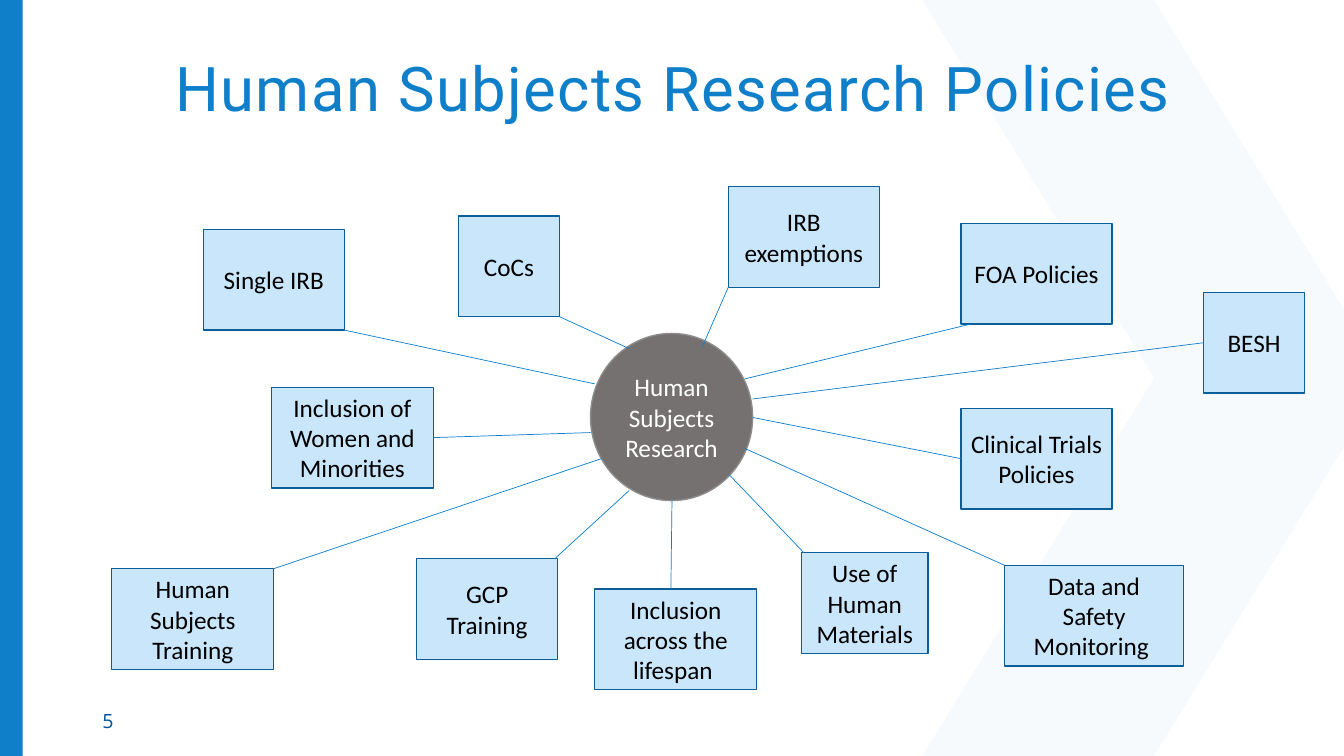
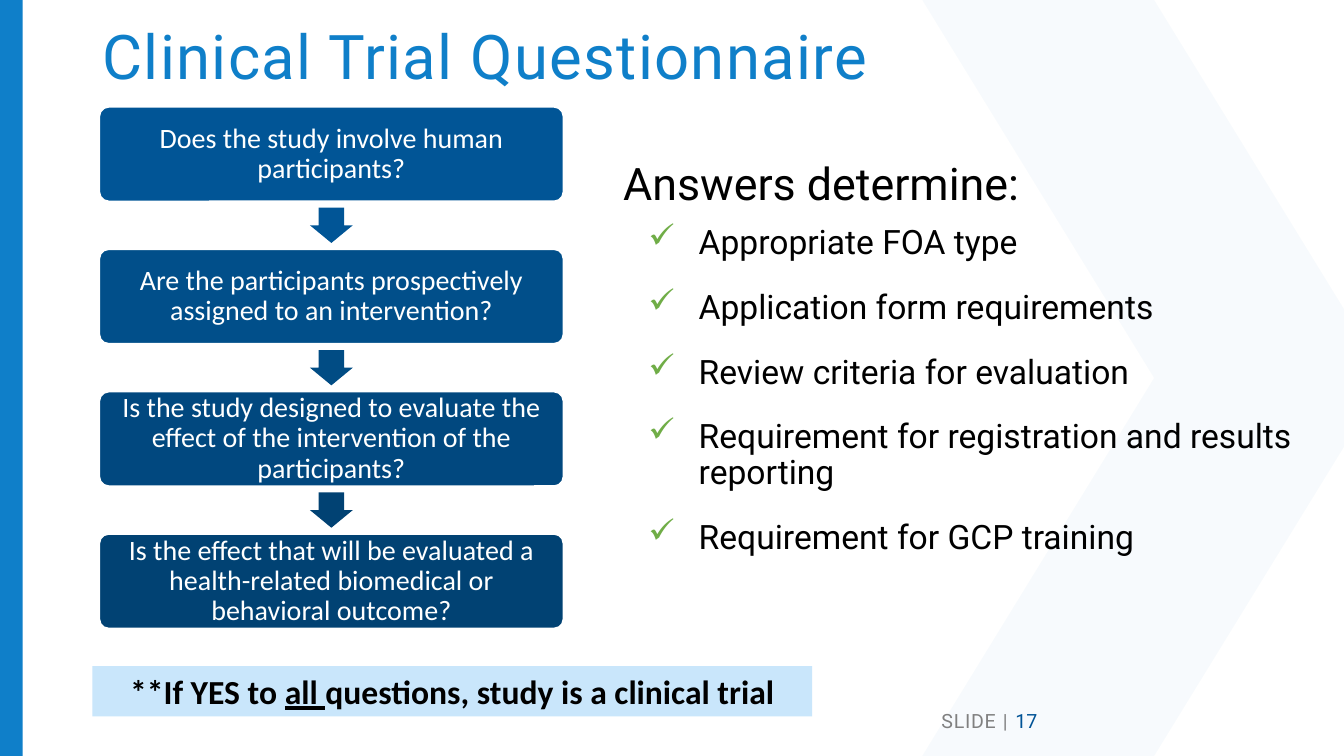
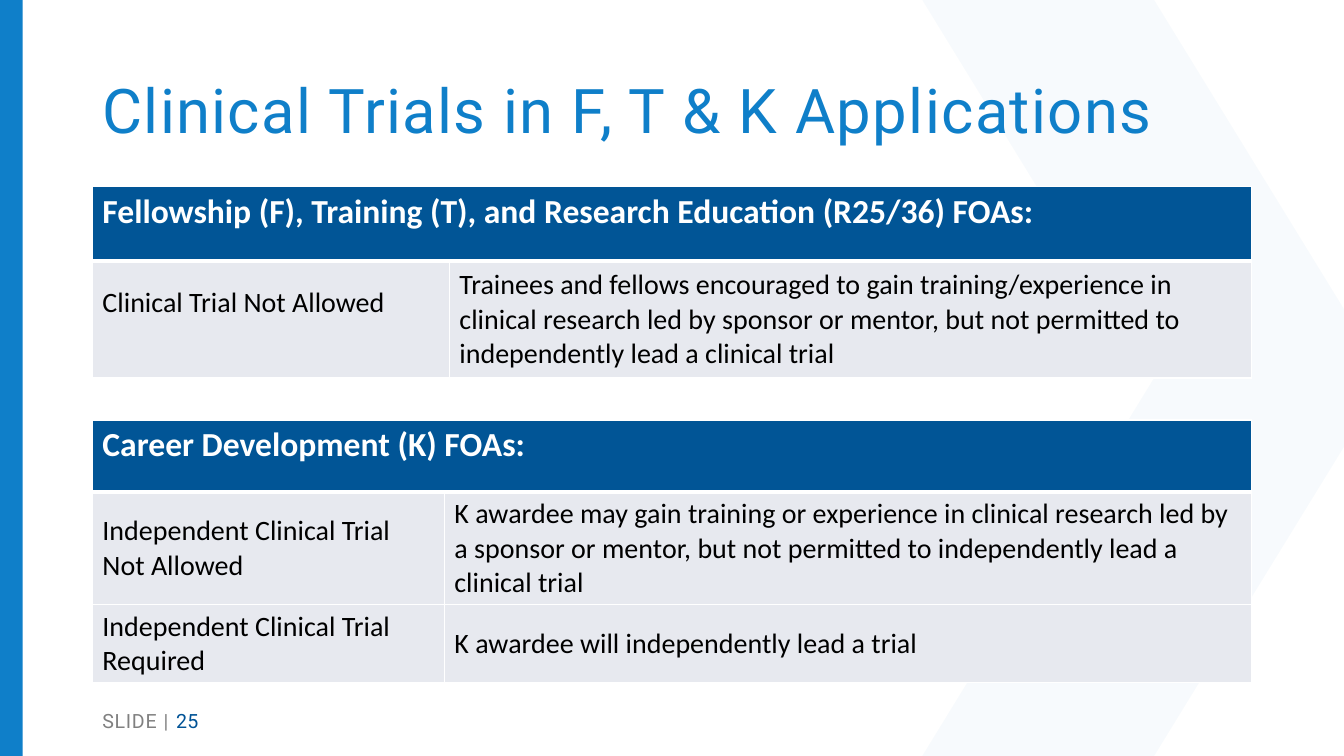
"""Three slides on human subjects research policies and clinical trials."""
from dataclasses import dataclass, replace
from typing import NamedTuple, Optional

from lxml import etree
from pptx import Presentation
from pptx import util as u
from pptx.dml.color import RGBColor
from pptx.enum import shapes, text
from pptx.oxml import ns

COLUMNS, ROWS = 160, 90
CELL = u.Pt(6)
MARGIN = 11
BODY_WIDTH = COLUMNS - 2 * MARGIN

BLUE, NAVY, DEEP_BLUE, PALE_BLUE = "0F7FC9", "015596", "015396", "C9E6FB"
EDGE_BLUE, LINK_BLUE = "0B5E98", "0F7FCD"
GREY, EDGE_GREY, LABEL_GREY, PALE_GREY = "767171", "8D8D8D", "808080", "E7E9EF"
GREEN, WHITE, BLACK = "70AD47", "FFFFFF", "000000"

MIDDLE, TOP = text.MSO_ANCHOR.MIDDLE, text.MSO_ANCHOR.TOP
LEFT, CENTER = text.PP_ALIGN.LEFT, text.PP_ALIGN.CENTER
PRESET = shapes.MSO_SHAPE


@dataclass(frozen=True)
class Style:
    size: float
    colour: str
    font: str = "Calibri"
    bold: bool = False
    underline: bool = False
    tracking: float = 0


class Area(NamedTuple):
    left: float
    top: float
    width: float
    height: float


class Outline(NamedTuple):
    colour: str
    width: float


class Policy(NamedTuple):
    name: str
    left: float
    top: float
    width: float
    anchor: tuple[float, float]
    hub_point: tuple[float, float]


class Step(NamedTuple):
    question: str
    fill: str
    arrow: Optional[str]


class Grid(NamedTuple):
    top: float
    columns: list[float]
    rows: list[float]
    heading: str
    body: list[list[str]]


TITLE = Style(44, BLUE, "Roboto", tracking=1)
POLICY = Style(18, BLACK)
HUB = Style(18, WHITE)
QUESTION = Style(20, WHITE)
NOTE = Style(24, BLACK, bold=True)
LEAD = Style(32, BLACK, "Roboto")
ANSWER = Style(24, BLACK, "Roboto")
HEADING = Style(24, WHITE, bold=True)
ENTRY = Style(20, BLACK)
LABEL = Style(14, LABEL_GREY, "Roboto", tracking=0.5)
NUMBER = Style(14, DEEP_BLUE, "Roboto")

HUB_AREA = Area(70.3, 39.7, 19.3, 19.9)
POLICY_HEIGHT = 12
SIDES = {(0.5, 0): 0, (0, 0.5): 1, (0.5, 1): 2, (1, 0.5): 3}
POLICIES = [
    Policy("Single IRB", 24.2, 27.3, 16.8, (1, 1), (70.8, 45.7)),
    Policy("CoCs", 54.6, 25.7, 12, (1, 1), (74.9, 41.5)),
    Policy("IRB exemptions", 86.7, 22.2, 18, (0, 1), (83.6, 41.3)),
    Policy("FOA Policies", 114.4, 26.6, 18, (0.06, 1), (88.7, 45.1)),
    Policy("BESH", 143.3, 34.8, 12, (0, 0.5), (89.6, 47.5)),
    Policy("Clinical Trials Policies", 114.4, 48.6, 18, (0, 0.5), (89.6, 49.7)),
    Policy("Data and Safety Monitoring ", 119.6, 67.3, 21.3, (0, 0), (88.7, 53.4)),
    Policy("Use of Human Materials", 95.4, 65.8, 15.1, (0.02, 0), (86.8, 56.5)),
    Policy("Inclusion across the lifespan ", 70.8, 70.1, 19.3, (0.47, 0), (80, 59.6)),
    Policy("GCP Training", 49.6, 66.5, 16.8, (0.98, 0), (74.9, 58.4)),
    Policy("Human Subjects Training", 13.3, 67.7, 19.3, (1, 0), (71.6, 54.6)),
    Policy("Inclusion of Women and Minorities", 32.3, 46.1, 19.3, (1, 0.5), (70.3, 51.5)),
]

FIRST_STEP = Area(11.8, 12.7, 55.3, 11.3)
STEP_PITCH = 16.95
ARROW_WIDTH, ARROW_HEIGHT = 5.1, 4.2
STEPS = [
    Step("Does the study involve human participants?", NAVY, NAVY),
    Step("Are the participants prospectively assigned to an intervention?", "014F8A", "014C84"),
    Step("Is the study designed to evaluate the effect of the intervention of the participants?",
         "01487F", "014273"),
    Step("Is the effect that will be evaluated a health-related biomedical or behavioral outcome?",
         "014273", None),
]
ANSWERS = [
    "Appropriate FOA type",
    "Application form requirements",
    "Review criteria for evaluation",
    "Requirement for registration and results reporting",
    "Requirement for GCP training",
]

FELLOWSHIP = Grid(
    22.2, [42.5, 95.5], [8.9, 13.9],
    "Fellowship (F), Training (T), and Research Education (R25/36) FOAs:",
    [["Clinical Trial Not Allowed",
      "Trainees and fellows encouraged to gain training/experience in clinical research led by "
      "sponsor or mentor, but not permitted to independently lead a clinical trial"]])
CAREER = Grid(
    50, [41.9, 96.1], [8.6, 13.4, 9.3],
    "Career Development (K) FOAs:",
    [["Independent Clinical Trial Not Allowed",
      "K awardee may gain training or experience in clinical research led by a sponsor or mentor, "
      "but not permitted to independently lead a clinical trial"],
     ["Independent Clinical Trial Required", "K awardee will independently lead a trial"]])


def cells(count: float) -> int:
    """Turn a number of grid cells into a length."""
    return u.Emu(round(count * CELL))


def place(area: Area) -> tuple:
    """Turn an area of the grid into left, top, width and height."""
    return tuple(cells(value) for value in area)


def rgb(value: str) -> RGBColor:
    """Turn a hex string into a colour."""
    return RGBColor.from_string(value)


def add_child(parent, tag: str, **attributes):
    """Append a DrawingML element to a parent element."""
    return etree.SubElement(parent, ns.qn(tag), attributes)


def format_run(span, style: Style) -> None:
    """Apply a text style to a run."""
    span.font.size = u.Pt(style.size)
    span.font.name = style.font
    span.font.bold = style.bold
    span.font.underline = style.underline
    span.font.color.rgb = rgb(style.colour)
    if style.tracking:
        span.font._element.set("spc", str(round(style.tracking * 100)))


def write(frame, spans: list[tuple[str, Style]], align=LEFT, anchor=MIDDLE, leading: float = 1.0) -> None:
    """Fill a text frame with one paragraph of styled spans."""
    frame.word_wrap = True
    frame.vertical_anchor = anchor
    para = frame.paragraphs[0]
    para.alignment = align
    para.line_spacing = leading
    for words, style in spans:
        span = para.add_run()
        span.text = words
        format_run(span, style)


def paint(shape, fill: str, outline: Optional[Outline] = None) -> None:
    """Give a shape a plain fill and an optional outline."""
    shape.shadow.inherit = False
    shape.fill.solid()
    shape.fill.fore_color.rgb = rgb(fill)
    if outline:
        shape.line.color.rgb = rgb(outline.colour)
        shape.line.width = u.Pt(outline.width)
    else:
        shape.line.fill.background()


def add_box(page, preset, area: Area, fill: str, outline: Optional[Outline] = None):
    """Add a painted preset shape."""
    box = page.shapes.add_shape(preset, *place(area))
    paint(box, fill, outline)
    return box


def add_text(page, area: Area, spans: list[tuple[str, Style]], leading: float = 1.0) -> None:
    """Add a text box with one paragraph."""
    write(page.shapes.add_textbox(*place(area)).text_frame, spans, leading=leading)


def add_page(deck, title: str, title_area: Area):
    """Add a blank page with the chevron, the side bar and a title."""
    page = deck.slides.add_slide(deck.slide_layouts[6])
    outer, inner, middle = 109.8, 137.4, ROWS / 2
    corners = [(inner, 0), (COLUMNS, 36.8), (COLUMNS, ROWS - 36.8), (inner, ROWS),
               (outer, ROWS), (inner, middle)]
    builder = page.shapes.build_freeform(cells(outer), 0)
    builder.add_line_segments([(cells(x), cells(y)) for x, y in corners], close=True)
    chevron = builder.convert_to_shape()
    paint(chevron, BLUE)
    add_child(chevron._element.spPr.find(".//" + ns.qn("a:srgbClr")), "a:alpha", val="3000")
    add_box(page, PRESET.RECTANGLE, Area(0, 0, 2.7, ROWS), BLUE)
    add_text(page, title_area, [(title, TITLE)], leading=0.9)
    return page


def add_footer(page, spans: list[tuple[str, Style]], left: float = MARGIN) -> None:
    """Add the page number line."""
    add_text(page, Area(left, 83.4, 36, 4.8), spans)


def numbered(number: str) -> list[tuple[str, Style]]:
    """Return the spans of a labelled page number."""
    return [("SLIDE", LABEL), (" | ", replace(LABEL, tracking=1)), (number, NUMBER)]


def add_policy(page, policy: Policy) -> None:
    """Add a policy box and its link to the hub."""
    area = Area(policy.left, policy.top, policy.width, POLICY_HEIGHT)
    box = add_box(page, PRESET.RECTANGLE, area, PALE_BLUE, Outline(EDGE_BLUE, 1))
    write(box.text_frame, [(policy.name, POLICY)], CENTER)
    start = (area.left + policy.anchor[0] * area.width, area.top + policy.anchor[1] * area.height)
    link = page.shapes.add_connector(
        shapes.MSO_CONNECTOR.STRAIGHT, *(cells(value) for value in start + policy.hub_point))
    link.line.color.rgb = rgb(LINK_BLUE)
    link.line.width = u.Pt(0.5)
    add_child(link._element.spPr, "a:effectLst")
    if policy.anchor in SIDES:
        link.begin_connect(box, SIDES[policy.anchor])


def add_step(page, index: int, step: Step) -> None:
    """Add a question and the arrow below it."""
    area = FIRST_STEP._replace(top=FIRST_STEP.top + index * STEP_PITCH)
    box = add_box(page, PRESET.ROUNDED_RECTANGLE, area, step.fill, Outline(WHITE, 1.5))
    box.adjustments[0] = 0.1
    frame = box.text_frame
    frame.margin_left = frame.margin_right = frame.margin_top = frame.margin_bottom = u.Inches(0.08)
    write(frame, [(step.question, QUESTION)], CENTER, leading=0.9)
    if step.arrow:
        gap = STEP_PITCH - area.height
        arrow = add_box(page, PRESET.DOWN_ARROW, Area(
            area.left + (area.width - ARROW_WIDTH) / 2,
            area.top + area.height + (gap - ARROW_HEIGHT) / 2,
            ARROW_WIDTH, ARROW_HEIGHT), step.arrow)
        arrow.adjustments[0], arrow.adjustments[1] = 0.6, 0.5


def add_answers(page) -> None:
    """Add the lead line and the ticked list of answers."""
    frame = page.shapes.add_textbox(*place(Area(73, 17.4, 83.8, 57.2))).text_frame
    write(frame, [("Answers determine:", LEAD)], anchor=TOP, leading=1.08)
    for index, answer in enumerate(ANSWERS):
        para = frame.add_paragraph()
        para.text = answer
        para.level = 1
        properties = para._p.get_or_add_pPr()
        properties.set("marL", str(u.Inches(0.75)))
        properties.set("indent", str(u.Inches(-0.5)))
        add_child(add_child(properties, "a:buClr"), "a:srgbClr", val=GREEN)
        add_child(properties, "a:buChar", char="✓")
        para.line_spacing = 0.88
        para.space_before = u.Pt(9 if index else 12)
        para.space_after = u.Pt(12)
        format_run(para.runs[0], ANSWER)


def format_cell(cell, row: int) -> None:
    """Give a table cell white borders and its row's fill."""
    properties = cell._tc.get_or_add_tcPr()
    widths = {"a:lnL": 1, "a:lnR": 1, "a:lnT": 3 if row == 1 else 1, "a:lnB": 3 if row == 0 else 1}
    for tag, width in widths.items():
        border = add_child(properties, tag, w=str(u.Pt(width)))
        add_child(add_child(border, "a:solidFill"), "a:srgbClr", val=WHITE)
    cell.fill.solid()
    cell.fill.fore_color.rgb = rgb(PALE_GREY if row else NAVY)


def add_grid(page, grid: Grid):
    """Add a table with a heading across both columns."""
    area = Area(MARGIN, grid.top, BODY_WIDTH, sum(grid.rows))
    table = page.shapes.add_table(len(grid.rows), len(grid.columns), *place(area)).table
    table.horz_banding = False
    for column, width in zip(table.columns, grid.columns):
        column.width = cells(width)
    for row, height in enumerate(grid.rows):
        table.rows[row].height = cells(height)
        for column in range(len(grid.columns)):
            cell = table.cell(row, column)
            format_cell(cell, row)
            if row:
                write(cell.text_frame, [(grid.body[row - 1][column], ENTRY)])
                cell.vertical_anchor = MIDDLE
    heading = table.cell(0, 0)
    heading.merge(table.cell(0, len(grid.columns) - 1))
    write(heading.text_frame, [(grid.heading, HEADING)], anchor=TOP)
    return table


def add_policies_page(deck) -> None:
    """Build the map of policies around human subjects research."""
    page = add_page(deck, "Human Subjects Research Policies", Area(19.7, 2.9, 127, 16.1))
    add_footer(page, [("5", replace(NUMBER, font="Open Sans"))])
    hub = add_box(page, PRESET.FLOWCHART_CONNECTOR, HUB_AREA, GREY, Outline(EDGE_GREY, 1))
    write(hub.text_frame, [("Human Subjects Research", HUB)], CENTER)
    for policy in POLICIES:
        add_policy(page, policy)


def add_questionnaire_page(deck) -> None:
    """Build the chain of questions and what the answers determine."""
    page = add_page(deck, "Clinical Trial Questionnaire", Area(MARGIN, 1.8, 124, 10.6))
    add_answers(page)
    for index, step in enumerate(STEPS):
        add_step(page, index, step)
    note = add_box(page, PRESET.RECTANGLE, Area(MARGIN, 79.3, 85.7, 6), PALE_BLUE)
    write(note.text_frame, [
        ("**If YES to ", NOTE),
        ("all ", replace(NOTE, underline=True)),
        ("questions, study is a clinical trial", NOTE),
    ], CENTER, TOP)
    add_footer(page, numbered("17"), 110.9)


def add_applications_page(deck) -> None:
    """Build the tables of rules by kind of application."""
    page = add_page(deck, "Clinical Trials in F, T & K Applications", Area(MARGIN, 4.8, BODY_WIDTH, 17.4))
    fellowship = add_grid(page, FELLOWSHIP)
    fellowship.cell(1, 0).margin_bottom = u.Inches(0.39)
    add_grid(page, CAREER)
    add_footer(page, numbered("25"))


def main() -> None:
    """Build and save the deck."""
    deck = Presentation()
    deck.slide_width, deck.slide_height = cells(COLUMNS), cells(ROWS)
    add_policies_page(deck)
    add_questionnaire_page(deck)
    add_applications_page(deck)
    deck.save("out.pptx")


if __name__ == "__main__":
    main()
